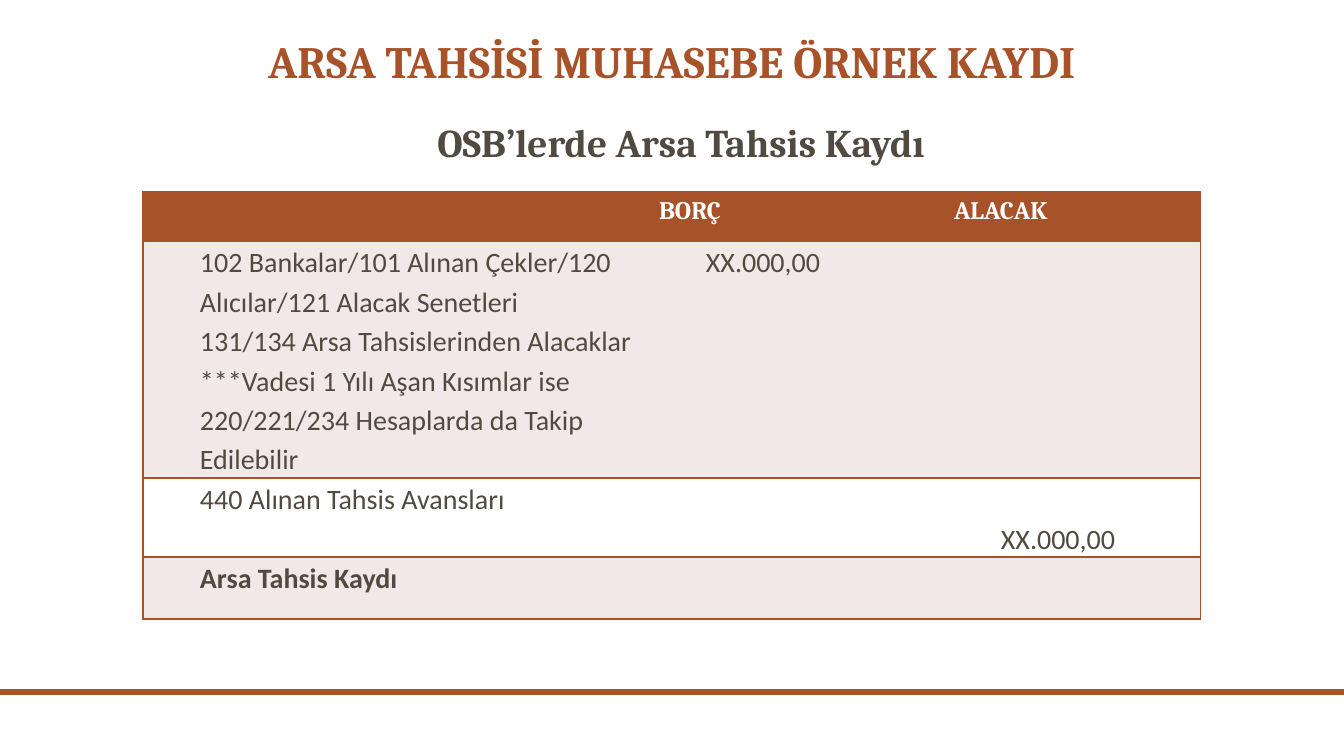
from dataclasses import dataclass

from lxml import etree
from pptx import Presentation
from pptx.dml.color import RGBColor
from pptx.enum import shapes, text
from pptx.oxml import ns
from pptx.util import Emu, Pt

EMU_PER_PX = 914400 / 100.8


@dataclass(frozen=True)
class Theme:
    rust: str = "A85229"
    ink: str = "514A40"
    white: str = "FFFFFF"
    band: str = "F1E9E8"
    heading_font: str = "Cambria"
    body_font: str = "Calibri"
    title_size: int = 32
    subtitle_size: int = 28
    header_size: int = 18
    body_size: int = 20


THEME = Theme()
COLUMN_WIDTHS = [506, 295, 257]
ROW_HEIGHTS = [49, 237, 79, 62]
ROW_FILLS = [THEME.rust, THEME.band, THEME.white, THEME.band]
ENTRIES = [
    ["", "BORÇ", "ALACAK"],
    [
        "102 Bankalar/101 Alınan Çekler/120 Alıcılar/121 Alacak Senetleri\n"
        "131/134 Arsa Tahsislerinden Alacaklar\n"
        "***Vadesi 1 Yılı Aşan Kısımlar ise 220/221/234 Hesaplarda da Takip Edilebilir",
        "XX.000,00",
        "",
    ],
    ["440 Alınan Tahsis Avansları", "", "XX.000,00"],
    ["Arsa Tahsis Kaydı", "", ""],
]


def px(length):
    return Emu(round(length * EMU_PER_PX))


def style_font(para, name, size, color, bold=True):
    para.font.name = name
    para.font.size = Pt(size)
    para.font.bold = bold
    para.font.color.rgb = RGBColor.from_string(color)


def add_heading(page, wording, place, size, color, anchor, spacing):
    box = page.shapes.add_textbox(*map(px, place))
    frame = box.text_frame
    frame.word_wrap = True
    frame.vertical_anchor = anchor
    frame.text = wording
    para = frame.paragraphs[0]
    para.alignment = text.PP_ALIGN.CENTER
    para.line_spacing = spacing
    style_font(para, THEME.heading_font, size, color)


def add_bar(page, place):
    bar = page.shapes.add_shape(shapes.MSO_SHAPE.RECTANGLE, *map(px, place))
    bar.shadow.inherit = False
    bar.fill.solid()
    bar.fill.fore_color.rgb = RGBColor.from_string(THEME.rust)
    bar.line.fill.background()


def set_borders(cell, visible_sides):
    """Draw the given sides (letters of LRTB) and hide the others."""
    properties = cell._tc.get_or_add_tcPr()
    for index, side in enumerate("LRTB"):
        line = etree.Element(ns.qn(f"a:ln{side}"), w=str(Pt(1)))
        if side in visible_sides:
            fill = etree.SubElement(line, ns.qn("a:solidFill"))
            etree.SubElement(fill, ns.qn("a:srgbClr"), val=THEME.rust)
        else:
            etree.SubElement(line, ns.qn("a:noFill"))
        properties.insert(index, line)


def fill_body_cell(cell, wording, bold):
    cell.margin_left = cell.margin_right = px(7)
    cell.margin_top = cell.margin_bottom = 0
    cell.text = wording
    for para in cell.text_frame.paragraphs:
        para._p.get_or_add_pPr().set("marL", str(px(50)))
        para.line_spacing = 1.15
        style_font(para, THEME.body_font, THEME.body_size, THEME.ink, bold)


def add_ledger(page, left, top):
    frame = page.shapes.add_table(
        len(ROW_HEIGHTS), len(COLUMN_WIDTHS), px(left), px(top),
        px(sum(COLUMN_WIDTHS)), px(sum(ROW_HEIGHTS)))
    table = frame.table
    for column, width in zip(table.columns, COLUMN_WIDTHS):
        column.width = px(width)
    for row, height in zip(table.rows, ROW_HEIGHTS):
        row.height = px(height)

    last_row, last_column = len(ROW_HEIGHTS) - 1, len(COLUMN_WIDTHS) - 1
    table.cell(last_row, 0).merge(table.cell(last_row, last_column))
    for r, entry in enumerate(ENTRIES):
        for c, wording in enumerate(entry):
            cell = table.cell(r, c)
            cell.fill.solid()
            cell.fill.fore_color.rgb = RGBColor.from_string(ROW_FILLS[r])
            sides = "TB"
            if c == 0:
                sides += "L"
            if c == last_column or cell.is_merge_origin:
                sides += "R"
            set_borders(cell, sides)
            if r == 0:
                cell.text = wording
                style_font(cell.text_frame.paragraphs[0], THEME.heading_font,
                           THEME.header_size, THEME.white)
            elif wording:
                fill_body_cell(cell, wording, bold=r == last_row)
    table.cell(2, last_column).vertical_anchor = text.MSO_ANCHOR.BOTTOM


def main():
    deck = Presentation()
    deck.slide_width, deck.slide_height = px(1344), px(756)
    page = deck.slides.add_slide(deck.slide_layouts[6])
    add_bar(page, (0, 689, 1344, 6))
    add_heading(page, "ARSA TAHSİSİ MUHASEBE ÖRNEK KAYDI", (143, 0, 1058, 93),
                THEME.title_size, THEME.rust, text.MSO_ANCHOR.BOTTOM, 0.9)
    add_ledger(page, 143, 192)
    add_heading(page, "OSB’lerde Arsa Tahsis Kaydı", (217, 113, 928, 57),
                THEME.subtitle_size, THEME.ink, text.MSO_ANCHOR.TOP, 1.0)
    deck.save("out.pptx")


if __name__ == "__main__":
    main()
